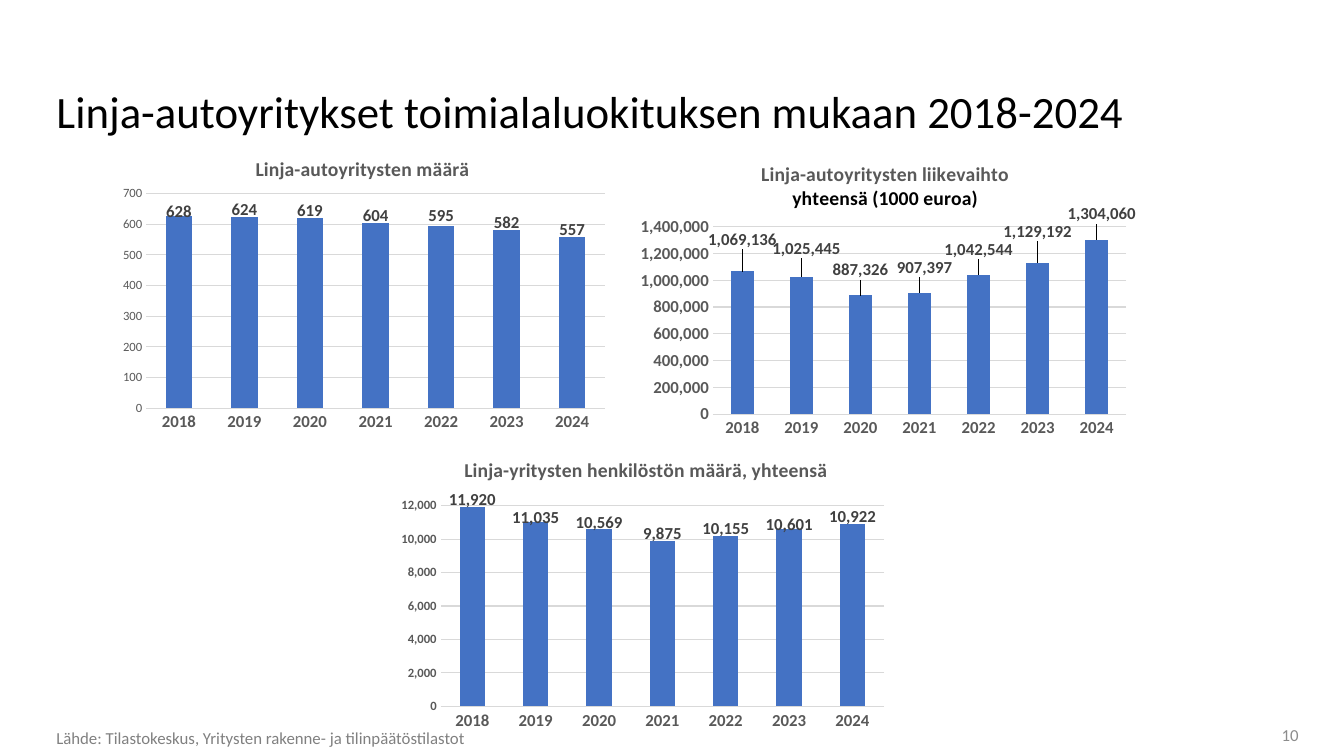
from lxml import etree
from pptx import Presentation
from pptx.chart.data import CategoryChartData
from pptx.dml.color import RGBColor
from pptx.enum.chart import XL_CHART_TYPE, XL_LABEL_POSITION, XL_TICK_MARK
from pptx.enum.text import MSO_ANCHOR, PP_ALIGN
from pptx.oxml.ns import qn
from pptx.util import Inches, Pt

STACKED = XL_CHART_TYPE.COLUMN_STACKED
INSIDE_END = XL_LABEL_POSITION.INSIDE_END
NO_TICK = XL_TICK_MARK.NONE
MIDDLE, BOTTOM = MSO_ANCHOR.MIDDLE, MSO_ANCHOR.BOTTOM
LEFT, RIGHT = PP_ALIGN.LEFT, PP_ALIGN.RIGHT

THEME = {
    "font": "Calibri",
    "black": "000000", "axis": "595959", "label": "404040", "bar": "4472C4",
    "grid": "D9D9D9", "source": "808080", "number": "8C8C8C",
    "title_size": 32, "chart_title_size": 14, "text_size": 12, "small_size": 9,
}


def format_font(font, size, color, bold=False):
    values = {"name": THEME["font"], "size": Pt(THEME[size]), "bold": bold}
    for name, value in values.items():
        setattr(font, name, value)
    font.color.rgb = RGBColor.from_string(THEME[color])


def set_layout(parent, index, values):
    for old_layout in parent.findall(qn("c:layout")):
        parent.remove(old_layout)
    layout = etree.Element(qn("c:layout"))
    manual = etree.SubElement(layout, qn("c:manualLayout"))
    for name, value in values.items():
        etree.SubElement(manual, qn("c:" + name)).set("val", str(value))
    parent.insert(index, layout)


presentation = Presentation()
presentation.slide_width = Inches(13.33)
presentation.slide_height = Inches(7.5)
slide = presentation.slides.add_slide(presentation.slide_layouts[5])

texts = [
    {"shape": slide.shapes.title, "box": (0.46, 0.78, 12.42, 0.63),
     "text": "Linja-autoyritykset toimialaluokituksen mukaan 2018-2024",
     "font": ("title_size", "black"), "align": LEFT, "anchor": BOTTOM, "inset": 0.1},
    {"shape": slide.shapes.add_textbox(0, 0, 0, 0), "box": (0.46, 7.19, 11.81, 0.26),
     "text": "Lähde: Tilastokeskus, Yritysten rakenne- ja tilinpäätöstilastot",
     "font": ("text_size", "source"), "align": LEFT, "anchor": MIDDLE, "inset": 0.1},
    {"shape": slide.shapes.add_textbox(0, 0, 0, 0), "box": (12.05, 7.14, 0.83, 0.3),
     "text": "10",
     "font": ("text_size", "number"), "align": RIGHT, "anchor": MIDDLE, "inset": 0},
]
for item in texts:
    shape = item["shape"]
    for name, value in zip(("left", "top", "width", "height"), item["box"]):
        setattr(shape, name, Inches(value))
    frame = shape.text_frame
    frame.word_wrap = True
    frame.vertical_anchor = item["anchor"]
    frame.margin_right = Inches(item["inset"])
    frame.text = item["text"]
    paragraph = frame.paragraphs[0]
    paragraph.alignment = item["align"]
    format_font(paragraph.runs[0].font, *item["font"])

years = [str(year) for year in range(2018, 2025)]
charts = [
    {"at": (1.1, 1.35), "title": [("Linja-autoyritysten määrä", "axis")],
     "values": [628, 624, 619, 604, 595, 582, 557],
     "format": "0", "maximum": 700, "unit": 100, "axis_font": ("small_size", "axis"),
     "plot": (0.07, 0.19, 0.91, 0.71), "title_at": (0.28, 0.05),
     "shift_x": [0] * 7,
     "shift_y": [-0.06, -0.07, -0.07, -0.07, -0.08, -0.07, -0.07]},
    {"at": (6.27, 1.41),
     "title": [("Linja-autoyritysten liikevaihto", "axis"),
               ("yhteensä (1000 euroa)", "black")],
     "values": [1069136, 1025445, 887326, 907397, 1042544, 1129192, 1304060],
     "format": "#,##0", "maximum": 1400000, "unit": 200000,
     "axis_font": ("text_size", "axis", True),
     "plot": (0.16, 0.28, 0.82, 0.62), "title_at": (0.25, 0.05),
     "shift_x": [0, 0.01, 0, 0.01, 0, 0, 0.01],
     "shift_y": [-0.15, -0.14, -0.13, -0.13, -0.13, -0.15, -0.13]},
    {"at": (3.87, 4.31),
     "title": [("Linja-yritysten henkilöstön määrä, yhteensä", "axis")],
     "values": [11920, 11035, 10569, 9875, 10155, 10601, 10922],
     "format": "#,##0", "maximum": 13000, "unit": 2000,
     "axis_font": ("small_size", "axis", True),
     "plot": (0.1, 0.18, 0.88, 0.72), "title_at": (0.14, 0.06),
     "shift_x": [0] * 7,
     "shift_y": [-0.07, -0.06, -0.07, -0.07, -0.07, -0.06, -0.07]},
]

for item in charts:
    data = CategoryChartData(number_format=item["format"])
    data.categories = years
    data.add_series(item["title"][0][0], item["values"])
    left, top = item["at"]
    chart = slide.shapes.add_chart(
        STACKED, Inches(left), Inches(top), Inches(5), Inches(3), data).chart
    chart.has_legend = False
    format_font(chart.font, "text_size", "black")

    chart.has_title = True
    title_frame = chart.chart_title.text_frame
    for index, (line, color) in enumerate(item["title"]):
        paragraph = title_frame.add_paragraph() if index else title_frame.paragraphs[0]
        run = paragraph.add_run()
        run.text = line
        format_font(run.font, "chart_title_size", color, True)
    title_x, title_y = item["title_at"]
    set_layout(title_frame._txBody.getparent().getparent(), 1,
               {"xMode": "edge", "yMode": "edge", "x": title_x, "y": title_y})

    plot_x, plot_y, plot_width, plot_height = item["plot"]
    set_layout(chart._chartSpace.chart.plotArea, 0,
               {"layoutTarget": "inner", "xMode": "edge", "yMode": "edge",
                "x": plot_x, "y": plot_y, "w": plot_width, "h": plot_height})

    category_axis, value_axis = chart.category_axis, chart.value_axis
    for axis in (category_axis, value_axis):
        axis.major_tick_mark = NO_TICK
        axis.minor_tick_mark = NO_TICK
    format_font(category_axis.tick_labels.font, "text_size", "axis", True)
    format_font(value_axis.tick_labels.font, *item["axis_font"])
    value_axis.minimum_scale = 0
    value_axis.maximum_scale = item["maximum"]
    value_axis.major_unit = item["unit"]
    value_axis.tick_labels.number_format = item["format"]
    value_axis.tick_labels.number_format_is_linked = False
    value_axis.format.line.fill.background()
    for line in (category_axis.format.line, value_axis.major_gridlines.format.line):
        line.width = Pt(0.75)
        line.color.rgb = RGBColor.from_string(THEME["grid"])

    plot = chart.plots[0]
    plot.gap_width = 150
    plot.overlap = 100
    plot.vary_by_categories = False
    series = plot.series[0]
    series.format.fill.solid()
    series.format.fill.fore_color.rgb = RGBColor.from_string(THEME["bar"])
    labels = series.data_labels
    labels.show_value = True
    labels.position = INSIDE_END
    labels.number_format = item["format"]
    labels.number_format_is_linked = False
    format_font(labels.font, "text_size", "label", True)
    for index, (shift_x, shift_y) in enumerate(zip(item["shift_x"], item["shift_y"])):
        label = series.points[index].data_label
        format_font(label.font, "text_size", "label", True)
        label.position = INSIDE_END
        set_layout(labels._element.findall(qn("c:dLbl"))[index], 1,
                   {"x": shift_x, "y": shift_y})

presentation.save("out.pptx")
